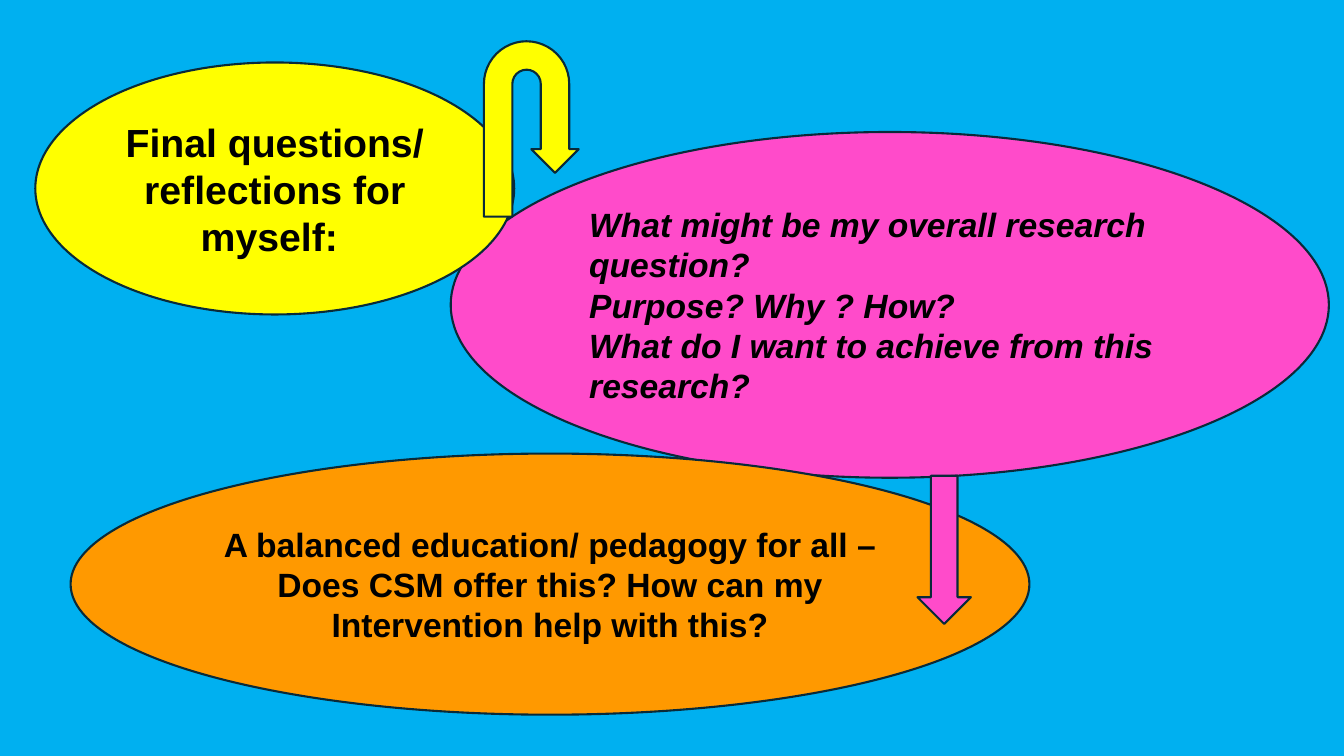
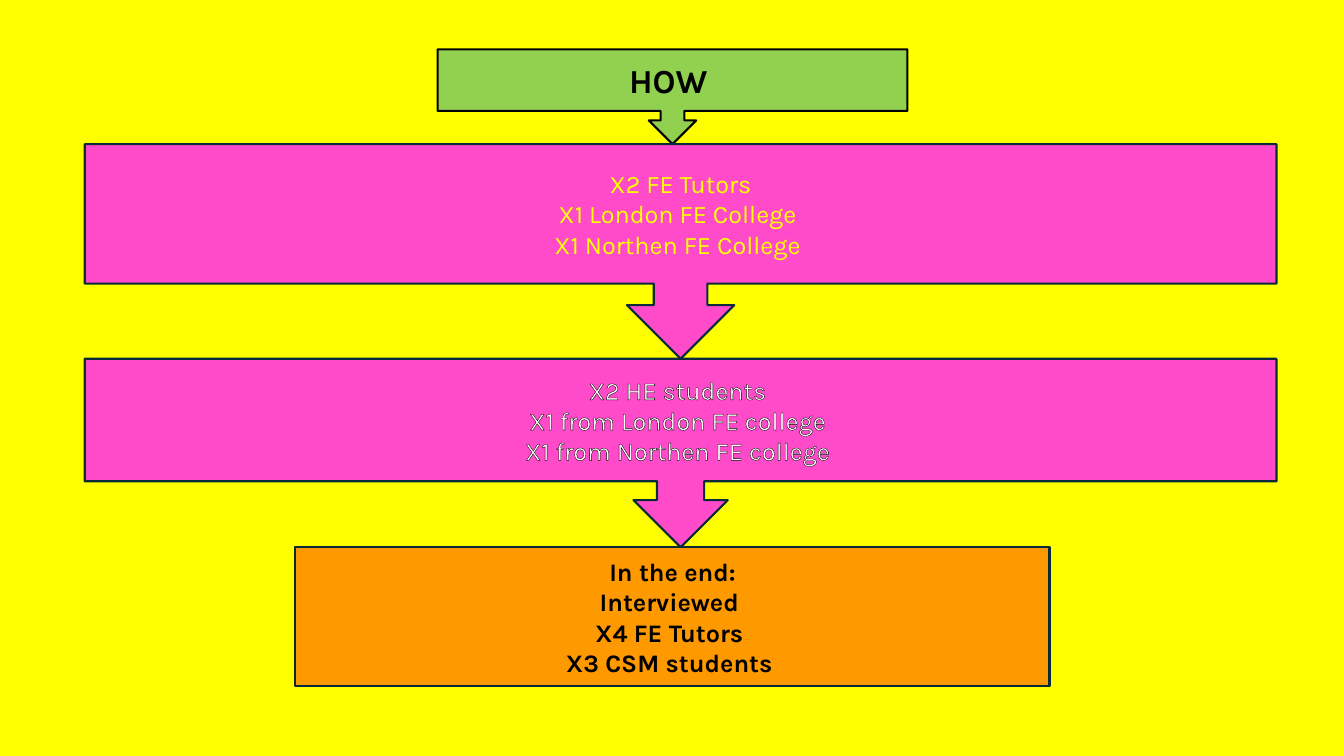
from lxml.etree import SubElement
from pptx import Presentation
from pptx.dml.color import RGBColor
from pptx.enum.shapes import MSO_SHAPE
from pptx.enum.text import MSO_ANCHOR, PP_ALIGN
from pptx.oxml.ns import qn
from pptx.util import Inches, Pt

COLORS = {
    "sky": "00B0F0",
    "yellow": "FFFF00",
    "pink": "FF4BCA",
    "orange": "FF9900",
    "green": "92D050",
    "navy": "092A39",
    "black": "000000",
    "white": "FFFFFF",
}
LINE_WIDTH = Pt(1.5)


def rgb(name):
    return RGBColor.from_string(COLORS[name])


def add_slide(prs, background):
    s = prs.slides.add_slide(prs.slide_layouts[6])
    s.background.fill.solid()
    s.background.fill.fore_color.rgb = rgb(background)
    return s


def add_block(s, kind, box, fill, line="navy", adjustments=()):
    """Add a filled and outlined shape; box is left, top, width, height."""
    sp = s.shapes.add_shape(kind, *(Inches(v) for v in box))
    sp.shadow.inherit = False
    sp.fill.solid()
    sp.fill.fore_color.rgb = rgb(fill)
    sp.line.color.rgb = rgb(line)
    sp.line.width = LINE_WIDTH
    for i, value in enumerate(adjustments):
        sp.adjustments[i] = value
    return sp


def outline_text(r):
    """Give the letters of a run a thin black contour."""
    rPr = r.font._element
    ln = rPr.makeelement(qn("a:ln"), {"w": str(Pt(0.75))})
    fill = SubElement(ln, qn("a:solidFill"))
    SubElement(fill, qn("a:srgbClr"), val=COLORS["black"])
    rPr.insert(0, ln)


def add_text(sp, lines, size, font, color="black", bold=True, italic=False,
             align=PP_ALIGN.CENTER, outlined=False):
    tf = sp.text_frame
    tf.word_wrap = True
    tf.vertical_anchor = MSO_ANCHOR.MIDDLE
    for i, line in enumerate(lines):
        p = tf.paragraphs[0] if i == 0 else tf.add_paragraph()
        p.alignment = align
        r = p.add_run()
        r.text = line
        r.font.name = font
        r.font.size = Pt(size)
        r.font.bold = bold
        r.font.italic = italic
        r.font.color.rgb = rgb(color)
        if outlined:
            outline_text(r)


def build_reflections(prs):
    s = add_slide(prs, "sky")

    # Overlapping ovals, back to front
    question = add_block(s, MSO_SHAPE.OVAL, (4.47, 1.31, 8.71, 3.43), "pink")
    add_text(question, ["What might be my overall research question?",
                        "Purpose? Why ? How?",
                        "What do I want to achieve from this research?"],
             24, "Arial", italic=True, align=PP_ALIGN.LEFT)
    heading = add_block(s, MSO_SHAPE.OVAL, (0.35, 0.62, 4.75, 2.5), "yellow")
    add_text(heading, ["Final questions/ reflections for myself: "], 28, "Arial")
    answer = add_block(s, MSO_SHAPE.OVAL, (0.7, 4.5, 9.51, 2.59), "orange")
    add_text(answer, ["A balanced education/ pedagogy for all – Does CSM offer "
                      "this? How can my Intervention help with this?"], 24, "Arial")

    # Arrows from oval to oval
    add_block(s, MSO_SHAPE.U_TURN_ARROW, (4.8, 0.41, 0.94, 1.74), "yellow",
              adjustments=(0.3, 0.25, 0.25, 0.45, 0.75))
    add_block(s, MSO_SHAPE.DOWN_ARROW, (9.1, 4.72, 0.53, 1.47), "pink")


def build_how(prs):
    s = add_slide(prs, "yellow")
    callout = MSO_SHAPE.DOWN_ARROW_CALLOUT

    # Steps: kind, centre, width, height, fill, line, lines, text style
    steps = [
        (callout, 6.67, 4.66, 0.94, "green", "black", ["HOW "], {"size": 24}),
        (callout, 6.75, 11.82, 2.13, "pink", "navy",
         ["X2 FE Tutors", "X1 London FE College ", "X1 Northen FE College "],
         {"size": 18, "color": "yellow", "bold": False, "outlined": True}),
        (callout, 6.75, 11.82, 1.87, "pink", "navy",
         ["X2 HE students ", "X1 from London FE college ",
          "X1 from Northen FE college "],
         {"size": 18, "color": "white", "bold": False, "outlined": True}),
        (MSO_SHAPE.RECTANGLE, 6.67, 7.48, 1.38, "orange", "navy",
         ["In the end:", "Interviewed ", "X4 FE Tutors ", "X3 CSM students "],
         {"size": 18}),
    ]

    # Each step starts where the arrow above it ends
    top = 0.49
    for kind, centre, width, height, fill, line, lines, style in steps:
        box = (centre - width / 2, top, width, height)
        sp = add_block(s, kind, box, fill, line)
        add_text(sp, lines, font="Karla", **style)
        top += height


def main():
    prs = Presentation()
    prs.slide_width = Inches(13.33)
    prs.slide_height = Inches(7.5)
    build_reflections(prs)
    build_how(prs)
    prs.save("out.pptx")


if __name__ == "__main__":
    main()
